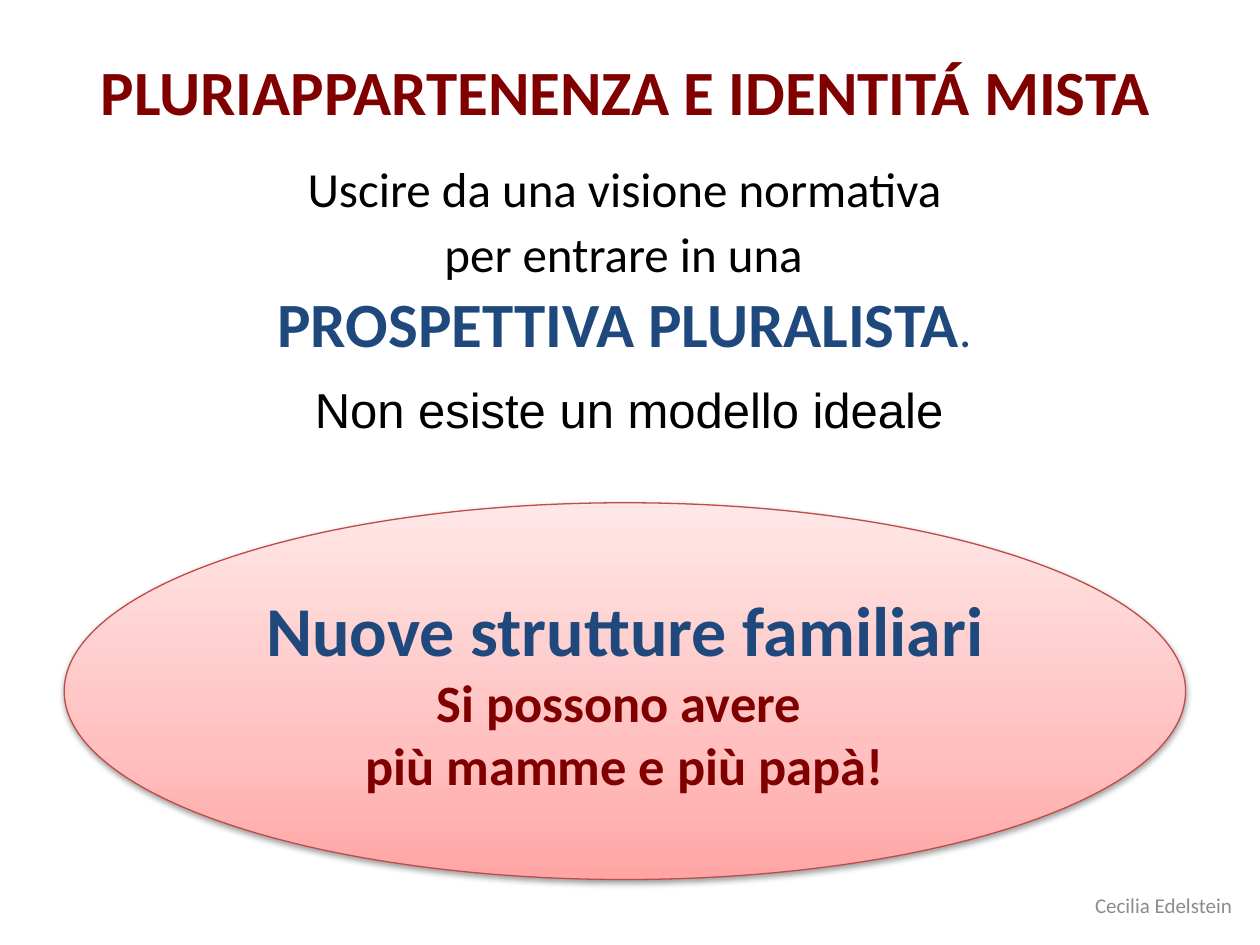
"""Build the slide on plural belonging and new family structures."""
from copy import deepcopy

from lxml import etree
from pptx import Presentation
from pptx.dml.color import RGBColor
from pptx.enum.shapes import MSO_SHAPE
from pptx.enum.text import MSO_ANCHOR as Anchor, MSO_AUTO_SIZE as AutoSize, PP_ALIGN as Align
from pptx.oxml.ns import qn
from pptx.util import Inches, Pt

MAROON, NAVY, BLACK, GREY = "800000", "1F497D", "000000", "8C8C8C"


def rgb(value):
    return RGBColor.from_string(value)


def write(shape, box, lines, anchor=Anchor.MIDDLE, align=Align.CENTER, wrap=True):
    shape.left, shape.top, shape.width, shape.height = [Inches(n) for n in box]
    frame = shape.text_frame
    frame.word_wrap = wrap
    frame.auto_size = AutoSize.NONE
    frame.vertical_anchor = anchor
    for index, (text, size, color, bold, face) in enumerate(lines):
        paragraph = frame.paragraphs[0] if index == 0 else frame.add_paragraph()
        paragraph.add_run().text = text
        paragraph.alignment = align
        font = paragraph.font
        font.name, font.size, font.bold = face, Pt(size), bold
        font.color.rgb = rgb(color)
    return frame


prs = Presentation()
prs.slide_width, prs.slide_height = Inches(10), Inches(7.5)
slide = prs.slides.add_slide(prs.slide_layouts[5])

write(slide.shapes.title, (0.2, 0.37, 9.53, 0.71),
      [("PLURIAPPARTENENZA E IDENTITÁ MISTA", 36, MAROON, True, "Calibri")], Anchor.TOP)

width, height = Inches(8.98), Inches(1.97)
outline = slide.shapes.build_freeform(0, 0)
outline.add_line_segments([(width, 0), (width, height), (0, height)], close=True)
perspective = outline.convert_to_shape()
perspective.fill.background()
perspective.line.fill.background()
perspective.shadow.inherit = False
statement = write(perspective, (0.51, 1.07, 8.98, 1.97), [
    ("Uscire da una visione normativa ", 28, BLACK, False, "Calibri"),
    ("per entrare in una", 28, BLACK, False, "Calibri"),
    ("PROSPETTIVA PLURALISTA", 36, NAVY, True, "Calibri"),
])
for paragraph, ending, size in zip(statement.paragraphs[1:], (" ", ". "), (32, 28)):
    tail = paragraph.add_run()
    tail.text = ending
    tail.font.size, tail.font.bold = Pt(size), False

families = slide.shapes.add_shape(MSO_SHAPE.OVAL, 0, 0, 0, 0)
write(families, (0.51, 3.99, 8.9, 2.99), [
    ("Nuove strutture familiari", 40, NAVY, True, "Calibri"),
    ("Si possono avere ", 30, MAROON, True, "Calibri"),
    ("più mamme e più papà!", 30, MAROON, True, "Calibri"),
])
families.line.color.rgb = rgb("BF4C48")
families.line.width = Pt(0.75)
families.fill.gradient()
families.fill.gradient_angle = 90
stop_list = families._element.spPr.find(".//" + qn("a:gsLst"))
stop_list.append(deepcopy(stop_list[0]))
gradient = ((0, "FFA6A5"), (0.35, "FFC0BF"), (1, "FFE7E7"))
for stop, (position, color) in zip(families.fill.gradient_stops, gradient):
    stop.position = position
    stop.color.rgb = rgb(color)

families.shadow.inherit = False
effects = families._element.spPr.find(qn("a:effectLst"))
shadow = etree.SubElement(effects, qn("a:outerShdw"), blurRad="40000", dist="20000",
                          dir="5400000", rotWithShape="0")
shade = etree.SubElement(shadow, qn("a:srgbClr"), val=BLACK)
etree.SubElement(shade, qn("a:alpha"), val="38000")

remark = slide.shapes.add_textbox(0, 0, 0, 0)
write(remark, (2.4, 2.96, 5.2, 0.57),
      [("Non esiste un modello ideale", 28, BLACK, False, "Arial")],
      Anchor.TOP, Align.LEFT, wrap=False)

author = slide.shapes.add_textbox(0, 0, 0, 0)
write(author, (8.47, 7.06, 1.53, 0.24),
      [("Cecilia Edelstein", 12, GREY, False, "Calibri")])

prs.save("out.pptx")
